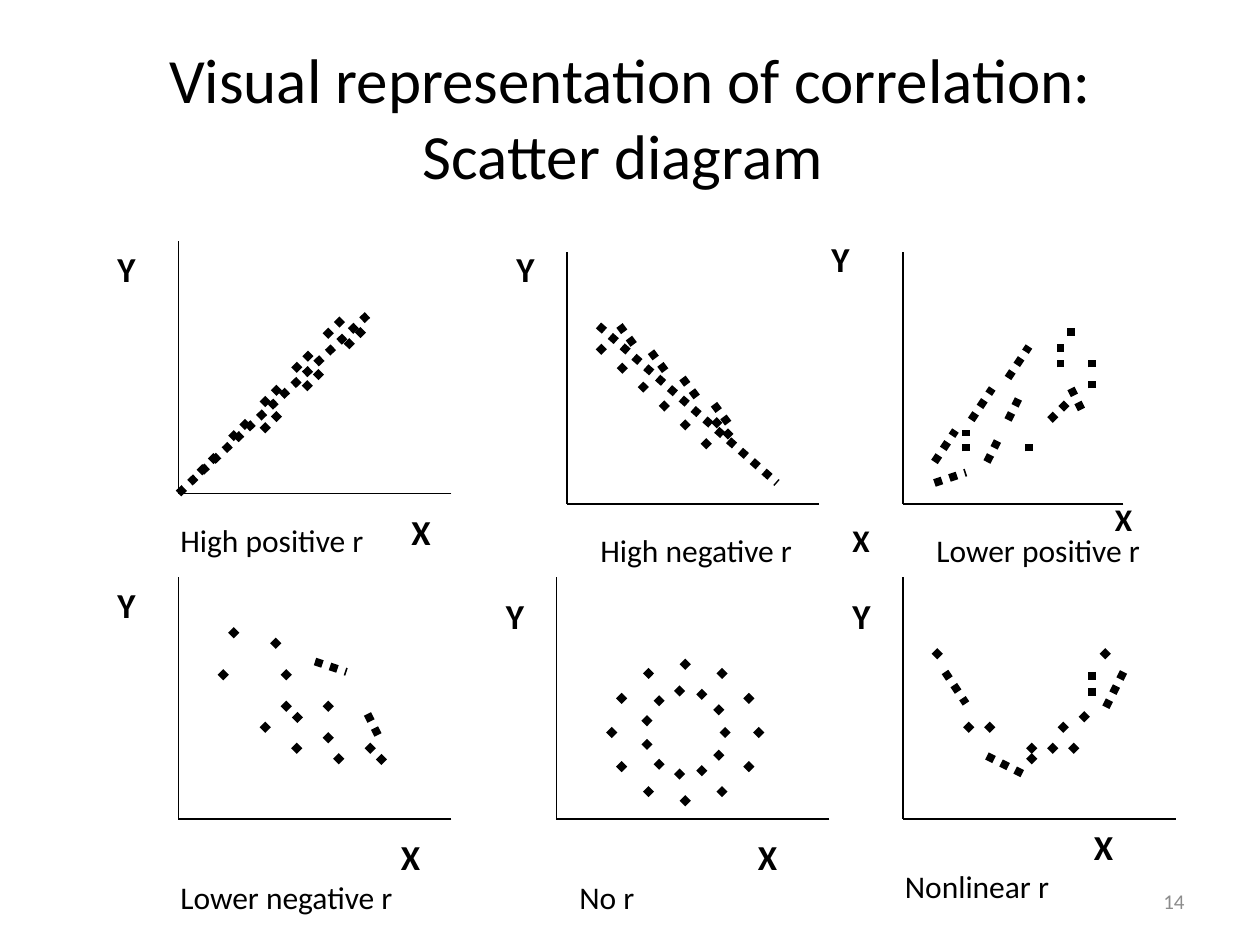
"""Build a slide with six scatter sketches of correlation, laid out on a grid of twelfths of an inch."""
import math

import pptx
import pptx.dml.color
import pptx.enum.dml
import pptx.enum.shapes
import pptx.enum.text
import pptx.oxml.ns
import pptx.util
from lxml import etree
from pptx.util import Inches

BLACK = pptx.dml.color.RGBColor(0x00, 0x00, 0x00)
GREY = pptx.dml.color.RGBColor(0x8C, 0x8C, 0x8C)
ALIGN = pptx.enum.text.PP_ALIGN
MIDDLE = pptx.enum.text.MSO_ANCHOR.MIDDLE
GRID = 12


class Deck:
    """Hold the style and the current slide."""

    font = "Calibri"

    def __init__(self):
        self.show = pptx.Presentation()
        self.show.slide_width = Inches(10)
        self.show.slide_height = Inches(7.5)
        self.slide = self.show.slides.add_slide(self.show.slide_layouts[5])

    def style(self, frame, size, color=BLACK, bold=False, align=ALIGN.LEFT):
        for para in frame.paragraphs:
            para.alignment = align
            for run in para.runs:
                run.font.name = self.font
                run.font.size = pptx.util.Pt(size)
                run.font.bold = bold
                run.font.color.rgb = color

    def title(self, text, left, top, width, height):
        shape = self.slide.shapes.title
        shape.left, shape.top = Inches(left), Inches(top)
        shape.width, shape.height = Inches(width), Inches(height)
        shape.text_frame.text = text
        shape.text_frame.vertical_anchor = MIDDLE
        self.style(shape.text_frame, 36, align=ALIGN.CENTER)

    def text(self, text, left, top, width, height, size, **look):
        box = self.slide.shapes.add_textbox(
            Inches(left), Inches(top), Inches(width), Inches(height))
        frame = box.text_frame
        frame.word_wrap = True
        frame.text = text
        self.style(frame, size, **look)
        return frame

    def line(self, ends, width=0.75, dash=None):
        line = self.slide.shapes.add_connector(
            pptx.enum.shapes.MSO_CONNECTOR.STRAIGHT, *[Inches(end / GRID) for end in ends])
        line.line.color.rgb = BLACK
        line.line.width = pptx.util.Pt(width)
        if dash:
            line.line.dash_style = dash
        etree.SubElement(line._element.spPr, pptx.oxml.ns.qn("a:effectLst"))

    def axes(self, name, left, top, width, height, gap, start, ymark, xmark, size=20):
        base = top + height
        self.line((left, top, left, base))
        self.line((left + width, base, left, base))
        for mark, spot, points in (("Y", ymark, 20), ("X", xmark, size)):
            x, y = spot
            self.text(mark, x / GRID, y / GRID, 0.42, 0.43, points, bold=True)
        self.text(name, start / GRID, (base + gap) / GRID, 2.17, 0.4, 18)

    def run(self, x, y, wide=1, high=1, count=1, right=0, down=0):
        for step in range(count):
            left, top = x + step * right, y + step * down
            self.line((left, top, left + wide, top + high), 4.5,
                      pptx.enum.dml.MSO_LINE.ROUND_DOT)

    def ring(self, x, y, wide, high, count):
        for step in range(count):
            turn = math.tau * step / count
            self.run(x + wide * math.cos(turn), y + high * math.sin(turn))


def main():
    deck = Deck()
    deck.title("Visual representation of correlation: Scatter diagram ", 0.5, 0.3, 9, 1.25)

    upper, lower = (24, 2), (23, 5)
    deck.axes("High positive r", 17, 23, 26, *upper, 16, (10, 23), (38, 48))
    deck.axes("High negative r", 54, 24, 24, *upper, 56, (48, 23), (80, 49), 18)
    deck.axes("Lower positive r", 86, 24, 21, *upper, 88, (78, 22), (105, 47), 18)
    deck.axes("Lower negative r", 17, 55, 26, *lower, 16, (10, 55), (37, 79))
    deck.axes("No r", 53, 55, 26, *lower, 54, (47, 56), (71, 79))
    deck.axes("Nonlinear r", 86, 55, 26, 23, 4, 85, (80, 56), (103, 78))

    rising = [(17, 47, 18, -17), (19, 45, 2, -2, 5, 3, -3.25), (25, 41, 2, -2, 3, 4, -4)]
    falling = [(57, 31, 17, 15), (59, 31, 1.5, 2, 4, 3, 2.5), (57, 33, 1, 1, 6, 2, 1.8),
               (68, 40, 2, 2)]
    loose = [(89, 44, 2, -3, 3, 3.5, -4), (94, 44, 1, -2, 2, 2, -4), (100, 40, 2, -2),
             (103, 39, -1, -2), (89, 46, 3, -1), (101, 35, 0, -3), (102, 32, 0, -1),
             (104, 37, 0, -1, 2, 0, -2), (92, 43, 0, -2), (98, 43, 0, -1)]
    sparse = [(22, 60), (26, 61), (21, 64), (27, 64), (31, 67), (25, 69), (31, 70), (28, 71),
              (32, 72), (30, 63, 3, 1), (35, 68, 1, 2), (27, 67, 2, 2), (35, 71, 2, 2)]
    curve = [(89, 62, 1, 1, 2, 16), (92, 69, 1, 1, 2, 2), (98, 71, 1, 1, 3, 2), (98, 72),
             (101, 69, 1, 1, 2, 2, -1), (90, 64, 2, 3), (94, 72, 4, 2), (104, 64, 0, 3),
             (107, 64, -2, 4)]
    for run in rising + falling + loose + sparse + curve:
        deck.run(*run)
    deck.ring(65, 69.5, 7, 6.5, 12)
    deck.ring(65, 69.5, 3.8, 4, 11)

    page = deck.text("14", 7.17, 6.95, 2.33, 0.4, 12, color=GREY, align=ALIGN.RIGHT)
    page.vertical_anchor = MIDDLE
    deck.show.save("out.pptx")


if __name__ == "__main__":
    main()
